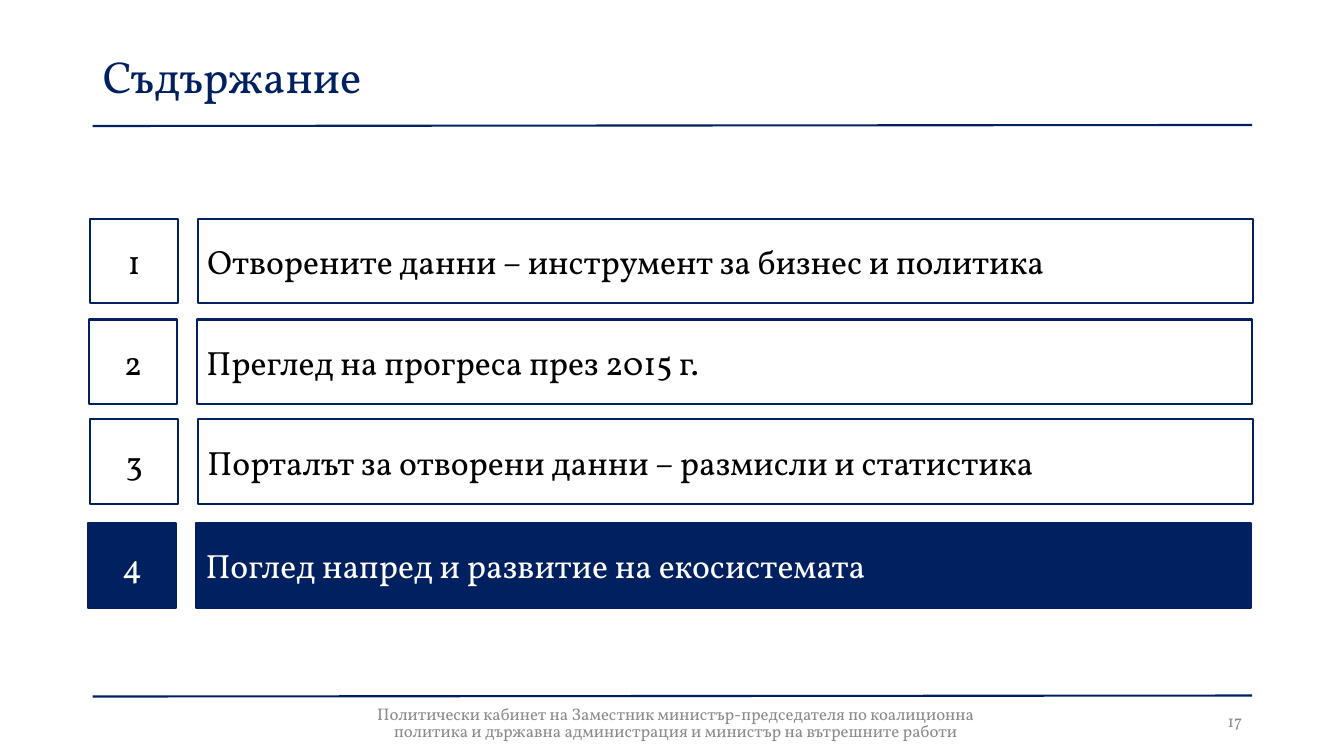
from dataclasses import dataclass
from lxml.etree import SubElement
from pptx import Presentation
from pptx.dml.color import RGBColor as Color
from pptx.enum.shapes import MSO_CONNECTOR as Link, MSO_SHAPE as Shape
from pptx.enum.text import MSO_ANCHOR as Anchor, PP_ALIGN as Align
from pptx.oxml.ns import qn
from pptx.util import Inches, Pt

# Content
TITLE = "Съдържание"
FOOTER = ("Политически кабинет на Заместник министър-председателя по "
          "коалиционна политика и държавна администрация и министър "
          "на вътрешните работи")
PAGE = "17"
# Text, top edge, left edge
TOPICS = [
    ("Отворените данни – инструмент за бизнес и политика", 2.17, 0.89),
    ("Преглед на прогреса през 2015 г.", 3.17, 0.88),
    ("Порталът за отворени данни – размисли и статистика", 4.16, 0.89),
    ("Поглед напред и развитие на екосистемата", 5.19, 0.87),
]
ACTIVE = 4


@dataclass(frozen=True)
class Theme:
    font: str = "Vollkorn"
    navy: Color = Color(0x00, 0x20, 0x60)
    white: Color = Color(255, 255, 255)
    black: Color = Color(0, 0, 0)
    gray: Color = Color(0x8B, 0x8B, 0x8B)
    head: int = 32
    body: int = 24
    small: int = 12
    stroke: float = 1.5


theme = Theme()

# Grid, in inches
WIDE, HIGH = 13.33, 7.5
LEFT, SPAN = 0.92, 11.5
ROW, NUM, BAR, STEP = 0.84, 0.88, 10.47, 1.07


def write(shape, text, size, color, align=Align.LEFT, lead=None):
    frame = shape.text_frame
    frame.word_wrap = True
    frame.vertical_anchor = Anchor.MIDDLE
    frame.margin_left = frame.margin_right = Inches(0.1)
    frame.margin_top = frame.margin_bottom = Inches(0.05)
    para = frame.paragraphs[0]
    para.alignment = align
    if lead:
        para.line_spacing = lead
    run = para.add_run()
    run.text = text
    run.font.name = theme.font
    run.font.size = Pt(size)
    run.font.color.rgb = color


def rule(slide, top):
    line = slide.shapes.add_connector(
        Link.STRAIGHT, Inches(LEFT), Inches(top),
        Inches(LEFT + SPAN), Inches(top - 0.01))
    line.line.color.rgb = theme.navy
    line.line.width = Pt(theme.stroke)
    SubElement(line._element.spPr, qn("a:effectLst"))


def box(slide, area, text, align, active):
    shape = slide.shapes.add_shape(Shape.RECTANGLE, *map(Inches, area))
    shape.shadow.inherit = False
    shape.fill.solid()
    shape.fill.fore_color.rgb = theme.navy if active else theme.white
    shape.line.color.rgb = theme.navy
    shape.line.width = Pt(theme.stroke)
    ink = theme.white if active else theme.black
    write(shape, text, theme.body, ink, align)


def label(slide, area, text, align, lead=None):
    shape = slide.shapes.add_textbox(*map(Inches, area))
    write(shape, text, theme.small, theme.gray, align, lead)


def main():
    deck = Presentation()
    deck.slide_width, deck.slide_height = Inches(WIDE), Inches(HIGH)
    slide = deck.slides.add_slide(deck.slide_layouts[5])

    # Title between the rules
    for top in (1.25, 6.91):
        rule(slide, top)
    title = slide.shapes.title
    title.left, title.top = Inches(LEFT), Inches(0.4)
    title.width, title.height = Inches(SPAN), Inches(0.69)
    write(title, TITLE, theme.head, theme.navy)

    # Agenda rows
    for num, (text, top, left) in enumerate(TOPICS, 1):
        active = num == ACTIVE
        box(slide, (left + STEP, top, BAR, ROW), text, Align.LEFT, active)
        box(slide, (left, top, NUM, ROW), str(num), Align.CENTER, active)

    # Footer and page number
    label(slide, (9.42, 6.95, 3, 0.4), PAGE, Align.RIGHT)
    label(slide, (3.4, 6.98, 6.61, 0.4), FOOTER, Align.CENTER, 0.83)
    deck.save("out.pptx")


if __name__ == "__main__":
    main()
